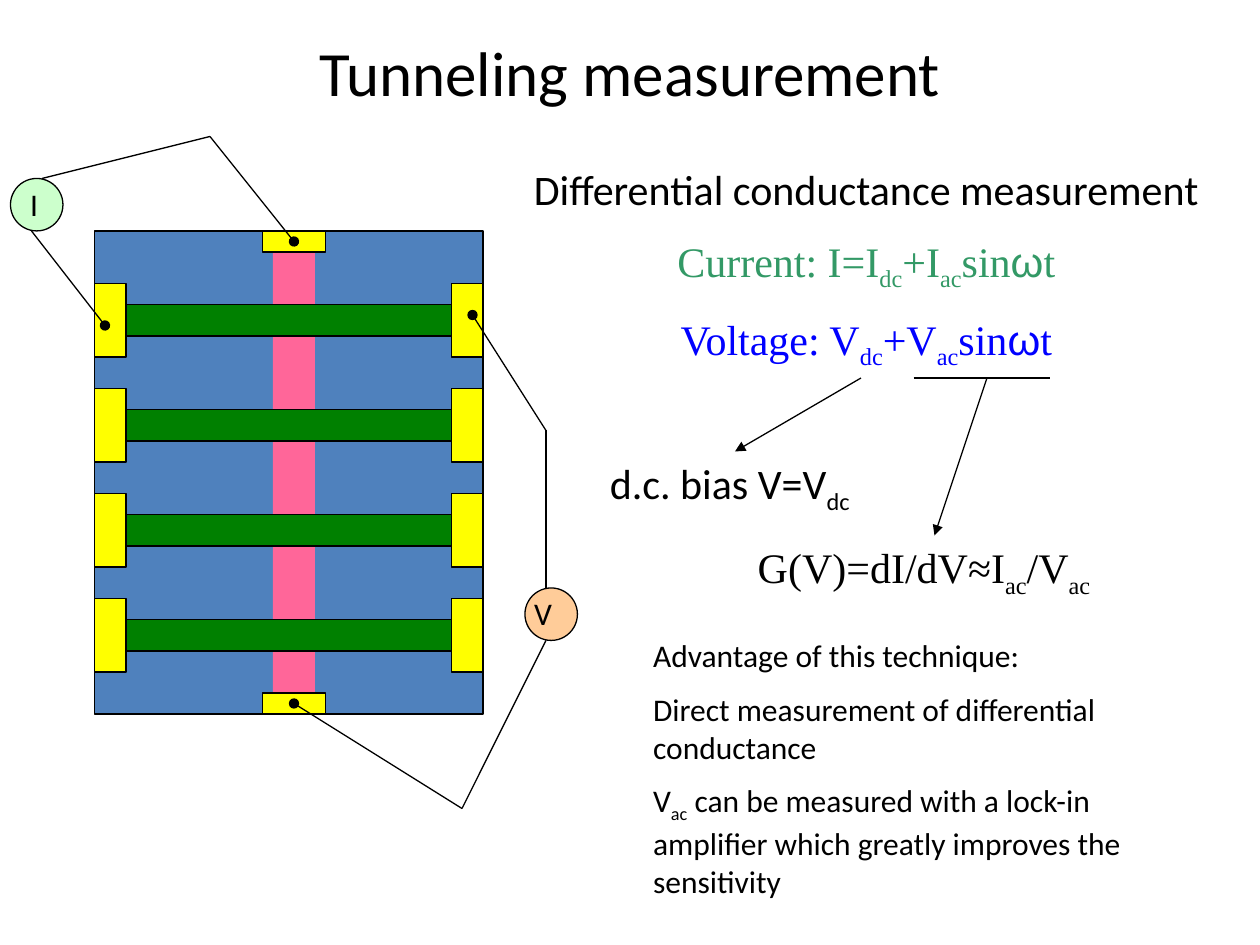
from dataclasses import dataclass
from typing import Optional

from pptx import Presentation
from pptx.dml.color import RGBColor
from pptx.enum.shapes import MSO_CONNECTOR, MSO_SHAPE
from pptx.enum.text import MSO_ANCHOR, MSO_AUTO_SIZE, PP_ALIGN
from pptx.oxml.ns import qn
from pptx.oxml.xmlchemy import OxmlElement
from pptx.util import Cm, Pt

BLACK = RGBColor(0x00, 0x00, 0x00)
BLUE = RGBColor(0x00, 0x00, 0xFF)
TEAL = RGBColor(0x33, 0x99, 0x66)
PLATE = RGBColor(0x4F, 0x81, 0xBD)
PINK = RGBColor(0xFF, 0x66, 0x99)
GREEN = RGBColor(0x00, 0x80, 0x00)
YELLOW = RGBColor(0xFF, 0xFF, 0x00)
MINT = RGBColor(0xCC, 0xFF, 0xCC)
PEACH = RGBColor(0xFF, 0xCC, 0x99)
SANS, SERIF = "Calibri", "Times New Roman"


@dataclass
class Block:
    x: float
    y: float
    w: float
    h: float
    fill: RGBColor
    edge: bool = True
    kind: MSO_SHAPE = MSO_SHAPE.RECTANGLE


@dataclass
class Wire:
    x1: float
    y1: float
    x2: float
    y2: float
    head: Optional[str] = None
    tail: Optional[str] = None


@dataclass
class Para:
    text: str
    size: int = 24
    font: str = SANS
    color: RGBColor = BLACK
    align: PP_ALIGN = PP_ALIGN.CENTER


def grid(n: float) -> Cm:
    """Length of n grid steps, twelve to the inch."""
    return Cm(n * 2.54 / 12)


def place(shape, x: float, y: float, w: float, h: float) -> None:
    spots = {"left": x, "top": y, "width": w, "height": h}
    for name, val in spots.items():
        setattr(shape, name, grid(val))


def draw_block(shapes, b: Block) -> None:
    shape = shapes.add_shape(b.kind, *map(grid, (b.x, b.y, b.w, b.h)))
    shape.shadow.inherit = False
    shape.fill.solid()
    shape.fill.fore_color.rgb = b.fill
    if b.edge:
        shape.line.color.rgb = BLACK
        shape.line.width = Pt(0.75)
    else:
        shape.line.fill.background()


def draw_wire(shapes, w: Wire) -> None:
    ends = map(grid, (w.x1, w.y1, w.x2, w.y2))
    wire = shapes.add_connector(MSO_CONNECTOR.STRAIGHT, *ends)
    wire.line.color.rgb = BLACK
    wire.line.width = Pt(0.75)
    props = wire._element.spPr
    for tag, kind in (("a:headEnd", w.head), ("a:tailEnd", w.tail)):
        if kind:
            end = OxmlElement(tag)
            end.set("type", kind)
            props.find(qn("a:ln")).append(end)
    props.append(OxmlElement("a:effectLst"))


def write(frame, paras: list[Para], anchor=MSO_ANCHOR.TOP) -> None:
    """Fill a frame; parts between underscores are subscripts or ω."""
    look = {"word_wrap": True, "auto_size": MSO_AUTO_SIZE.NONE,
            "vertical_anchor": anchor}
    for name, val in look.items():
        setattr(frame, name, val)
    for i, p in enumerate(paras):
        para = frame.add_paragraph() if i else frame.paragraphs[0]
        props = para._p.get_or_add_pPr()
        props.set("marL", "0")
        props.set("indent", "0")
        props.append(OxmlElement("a:buNone"))
        para.alignment = p.align
        para.space_before = Pt(p.size / 2 if i else 0)
        for j, part in enumerate(p.text.split("_")):
            if not part:
                continue
            run = para.add_run()
            run.text = part
            face = "Arial" if part == "ω" else p.font
            for name, val in {"size": Pt(p.size), "name": face}.items():
                setattr(run.font, name, val)
            run.font.color.rgb = p.color
            if j % 2 and part != "ω":
                run.font._element.set("baseline", "-25000")


def add_text(shapes, x, y, w, h, paras: list[Para]) -> None:
    write(shapes.add_textbox(*map(grid, (x, y, w, h))).text_frame, paras)


def draw_device(shapes) -> None:
    rows = range(0, 40, 10)
    blocks = [Block(9, 22, 37, 46, PLATE), Block(26, 22, 4, 46, PINK, False)]
    blocks += [Block(10, 29 + r, 35, 3, GREEN) for r in rows]
    blocks += [Block(x, 27 + r, 3, 7, YELLOW) for x in (9, 43) for r in rows]
    blocks += [Block(25, y, 6, 2, YELLOW) for y in (22, 66)]
    for b in blocks:
        draw_block(shapes, b)
    wires = [
        Wire(28, 23, 20, 13, head="oval"),
        Wire(10, 31, 3, 22, head="oval"),
        Wire(20, 13, 4, 17),
        Wire(45, 30, 52, 41, head="oval"),
        Wire(52, 41, 52, 56),
        Wire(28, 67, 44, 77, head="oval"),
        Wire(44, 77, 52, 61),
    ]
    for w in wires:
        draw_wire(shapes, w)
    meters = [("I", 1, 17, MINT, 1.7), ("V", 50, 56, PEACH, 49.7)]
    for name, x, y, fill, left in meters:
        draw_block(shapes, Block(x, y, 5, 5, fill, kind=MSO_SHAPE.OVAL))
        add_text(shapes, left, y, 6, 4.8,
                 [Para(name, 18, align=PP_ALIGN.LEFT)])


def main() -> None:
    deck = Presentation()
    deck.slide_width, deck.slide_height = Cm(25.4), Cm(19.05)
    slide = deck.slides.add_slide(deck.slide_layouts[1])
    shapes = slide.shapes

    title, body = shapes.title, slide.placeholders[1]
    place(title, 6, 3.6, 108, 6.4)
    write(title.text_frame, [Para("Tunneling measurement", 36)],
          MSO_ANCHOR.MIDDLE)
    place(body, 61, 60, 52, 26.4)
    points = [
        "Advantage of this technique:",
        "Direct measurement of differential conductance",
        "V_ac_ can be measured with a lock-in amplifier"
        " which greatly improves the sensitivity",
    ]
    write(body.text_frame,
          [Para(t, 18, align=PP_ALIGN.LEFT) for t in points])

    draw_device(shapes.add_group_shape().shapes)

    add_text(shapes, 45, 15, 75, 20.4, [
        Para("Differential conductance measurement"),
        Para("Current: I=I_dc_+I_ac_sin_ω_t", font=SERIF, color=TEAL),
        Para("Voltage: V_dc_+V_ac_sin_ω_t", font=SERIF, color=BLUE),
    ])
    add_text(shapes, 54, 43, 31, 6, [Para("d.c. bias V=V_dc_")])
    add_text(shapes, 65, 51, 46, 6,
             [Para("G(V)=dI/dV≈I_ac_/V_ac_", font=SERIF)])
    for w in (Wire(82, 36, 70, 43, tail="triangle"),
              Wire(87, 36, 100, 36),
              Wire(94, 36, 89, 51, tail="triangle")):
        draw_wire(shapes, w)

    deck.save("out.pptx")


if __name__ == "__main__":
    main()
